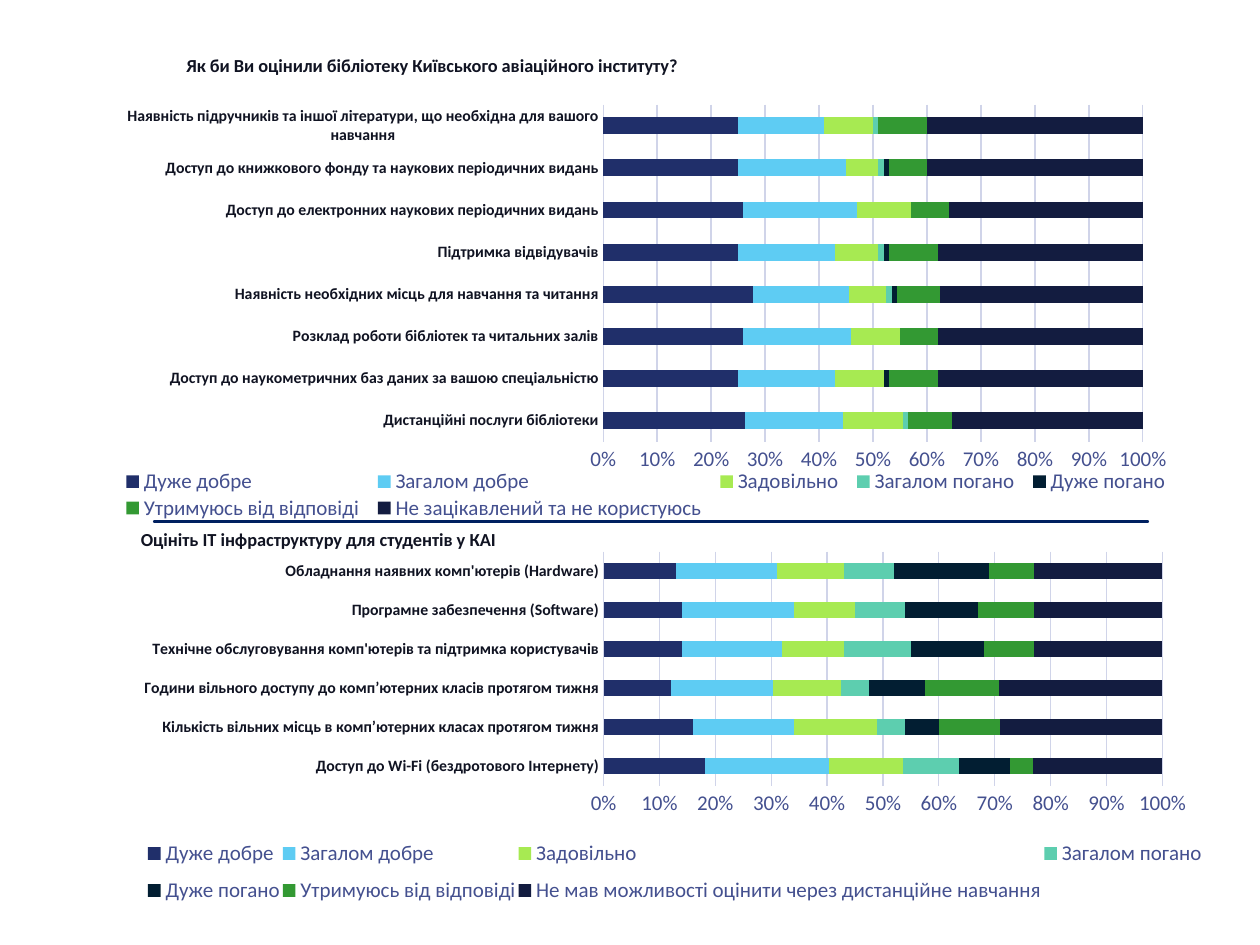
from dataclasses import dataclass

from lxml import etree
from pptx import Presentation
from pptx import util as u
from pptx.chart import data as chart_data
from pptx.dml import color
from pptx.enum import chart as ce
from pptx.enum import shapes, text
from pptx.oxml import ns

FONT = "Calibri"
COLORS = {
    "text": "101322", "label": "44508F", "grid": "D0D4E9", "divider": "002060",
    "Дуже добре": "202F6A", "Загалом добре": "5ECCF3", "Задовільно": "A7EA52",
    "Загалом погано": "5DCEAF", "Дуже погано": "021E32",
    "Утримуюсь від відповіді": "339933", "no experience": "131C40",
}
RATINGS = list(COLORS)[4:10]


@dataclass
class Box:
    left: float
    top: float
    width: float
    height: float

    def lengths(self) -> list:
        return [u.Pt(v) for v in (self.left, self.top, self.width, self.height)]


@dataclass
class Survey:
    title: str
    title_box: Box
    chart_box: Box
    plot: Box  # fractions of the chart
    legend: Box  # fractions of the chart
    last_answer: str
    answers: dict  # question -> one value per answer


SURVEYS = [
    Survey(
        "Як би Ви оцінили бібліотеку Київського авіаційного інституту?",
        Box(99.4, 27.4, 380, 20), Box(65.5, 49.7, 607, 260),
        Box(0.46, 0.039, 0.508, 0.741), Box(0, 0.837, 1, 0.119),
        "Не зацікавлений та не користуюсь",
        {
            "Дистанційні послуги бібліотеки": (26, 18, 11, 1, 0, 8, 35),
            "Доступ до наукометричних баз даних за вашою спеціальністю": (25, 18, 9, 0, 1, 9, 38),
            "Розклад роботи бібліотек та читальних залів": (26, 20, 9, 0, 0, 7, 38),
            "Наявність необхідних місць для навчання та читання": (28, 18, 7, 1, 1, 8, 38),
            "Підтримка відвідувачів": (25, 18, 8, 1, 1, 9, 38),
            "Доступ до електронних наукових періодичних видань": (26, 21, 10, 0, 0, 7, 36),
            "Доступ до книжкового фонду та наукових періодичних видань": (25, 20, 6, 1, 1, 7, 40),
            "Наявність підручників та іншої літератури, що необхідна для вашого навчання":
                (25, 16, 9, 1, 0, 9, 40),
        },
    ),
    Survey(
        "Оцініть IT інфраструктуру для студентів у КАІ",
        Box(73.4, 298, 224, 20), Box(70.6, 303.8, 617.8, 225.4),
        Box(0.444, 0.051, 0.517, 0.593), Box(0.02, 0.754, 0.98, 0.218),
        "Не мав можливості оцінити через дистанційне навчання",
        {
            "Доступ до Wi-Fi (бездротового Інтернету)": (18, 22, 13, 10, 9, 4, 23),
            "Кількість вільних місць в комп’ютерних класах протягом тижня":
                (16, 18, 15, 5, 6, 11, 29),
            "Години вільного доступу до комп’ютерних класів протягом тижня":
                (12, 18, 12, 5, 10, 13, 29),
            "Технічне обслуговування комп'ютерів та підтримка користувачів":
                (14, 18, 11, 12, 13, 9, 23),
            "Програмне забезпечення (Software)": (14, 20, 11, 9, 13, 10, 23),
            "Обладнання наявних комп'ютерів (Hardware)": (13, 18, 12, 9, 17, 8, 23),
        },
    ),
]


def rgb(name: str) -> color.RGBColor:
    return color.RGBColor.from_string(COLORS[name])


def style_font(font, size: float, name: str, bold: bool = False) -> None:
    font.name, font.size, font.bold = FONT, u.Pt(size), bold
    font.color.rgb = rgb(name)


def style_line(line, name: str, width: float) -> None:
    line.color.rgb = rgb(name)
    line.width = u.Pt(width)


def manual_layout(area: Box, inner: bool = False):
    """Build a c:layout element that fixes an area of the chart."""
    layout = etree.Element(ns.qn("c:layout"))
    manual = etree.SubElement(layout, ns.qn("c:manualLayout"))
    settings = [("layoutTarget", "inner")] if inner else []
    settings += [("xMode", "edge"), ("yMode", "edge"), ("x", area.left), ("y", area.top),
                 ("w", area.width), ("h", area.height)]
    for tag, value in settings:
        etree.SubElement(manual, ns.qn(f"c:{tag}")).set("val", str(value))
    return layout


def place_areas(chart, survey: Survey) -> None:
    """Fix the plot and the legend at their places in the chart."""
    root = chart._chartSpace
    plot_area = next(root.iter(ns.qn("c:plotArea")))
    legend = next(root.iter(ns.qn("c:legend")))
    for parent in (plot_area, legend):
        for old in parent.findall(ns.qn("c:layout")):
            parent.remove(old)
    plot_area.insert(0, manual_layout(survey.plot, inner=True))
    legend.find(ns.qn("c:legendPos")).addnext(manual_layout(survey.legend))


def add_survey_chart(page, survey: Survey) -> None:
    data = chart_data.CategoryChartData(number_format="0")
    data.categories = list(survey.answers)
    for name, values in zip(RATINGS + [survey.last_answer], zip(*survey.answers.values())):
        data.add_series(name, values)
    chart = page.shapes.add_chart(
        ce.XL_CHART_TYPE.BAR_STACKED_100, *survey.chart_box.lengths(), data).chart
    style_font(chart.font, 10, "text")
    chart.has_title = False

    bars = chart.plots[0]
    bars.gap_width, bars.overlap, bars.vary_by_categories = 150, 100, False
    for series in bars.series:
        series.format.fill.solid()
        series.format.fill.fore_color.rgb = rgb(
            series.name if series.name in RATINGS else "no experience")

    questions, shares = chart.category_axis, chart.value_axis
    for axis in (questions, shares):
        axis.major_tick_mark = axis.minor_tick_mark = ce.XL_TICK_MARK.NONE
    style_font(questions.tick_labels.font, 9, "text", bold=True)
    style_line(questions.format.line, "grid", 0.75)
    style_font(shares.tick_labels.font, 12, "label")
    shares.tick_labels.number_format = "0%"
    shares.tick_labels.number_format_is_linked = False
    shares.format.line.fill.background()
    shares.has_major_gridlines = True
    style_line(shares.major_gridlines.format.line, "grid", 0.75)

    chart.has_legend = True
    chart.legend.position = ce.XL_LEGEND_POSITION.BOTTOM
    chart.legend.include_in_layout = False
    style_font(chart.legend.font, 12, "label")
    place_areas(chart, survey)


def add_title(page, survey: Survey) -> None:
    frame = page.shapes.add_textbox(*survey.title_box.lengths()).text_frame
    frame.word_wrap = True
    frame.auto_size = text.MSO_AUTO_SIZE.SHAPE_TO_FIT_TEXT
    frame.text = survey.title
    style_font(frame.paragraphs[0].runs[0].font, 10.5, "text", bold=True)


def add_divider(page, left: float, right: float, top: float) -> None:
    line = page.shapes.add_connector(
        shapes.MSO_CONNECTOR.STRAIGHT, u.Pt(left), u.Pt(top), u.Pt(right), u.Pt(top))
    style_line(line.line, "divider", 2.25)
    properties = line._element.spPr
    properties.find(ns.qn("a:ln")).set("cap", "rnd")
    etree.SubElement(properties, ns.qn("a:effectLst"))


def main() -> None:
    deck = Presentation()
    deck.slide_width, deck.slide_height = u.Pt(720), u.Pt(540)
    page = deck.slides.add_slide(deck.slide_layouts[6])
    for survey in SURVEYS:
        add_survey_chart(page, survey)
        add_title(page, survey)
    add_divider(page, 88.5, 655.5, 298)
    deck.save("out.pptx")


if __name__ == "__main__":
    main()
